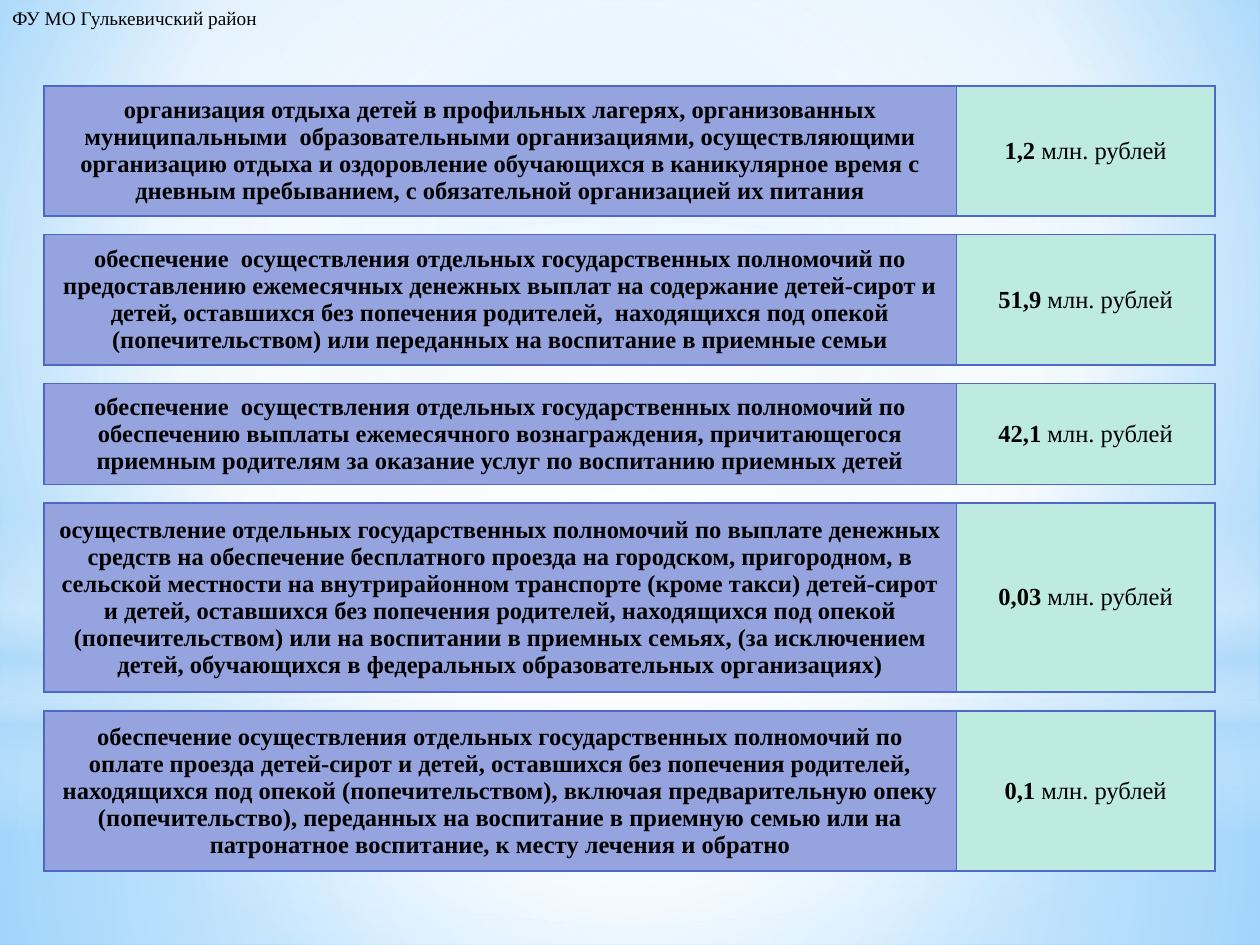
from lxml import etree
from pptx import Presentation
from pptx.dml.color import RGBColor
from pptx.enum.shapes import MSO_SHAPE
from pptx.enum.text import MSO_ANCHOR, MSO_AUTO_SIZE, PP_ALIGN
from pptx.oxml.ns import qn
from pptx.util import Cm, Pt

RECTANGLE, OVAL = MSO_SHAPE.RECTANGLE, MSO_SHAPE.OVAL
CENTER, MIDDLE = PP_ALIGN.CENTER, MSO_ANCHOR.MIDDLE
FIT_SHAPE = MSO_AUTO_SIZE.SHAPE_TO_FIT_TEXT

WIDTH, HEIGHT = 25.4, 19.05
CENTRE_FOCUS = (50, 50, 50, 50)
UNIT = " млн. рублей"

# Row height in cm, purpose of the spending, amount
EXPENSES = [
    (2.62, "организация отдыха детей в профильных лагерях, организованных "
     "муниципальными  образовательными организациями, осуществляющими "
     "организацию отдыха и оздоровление обучающихся в каникулярное время с "
     "дневным пребыванием, с обязательной организацией их питания", "1,2"),
    (2.62, "обеспечение  осуществления отдельных государственных полномочий по "
     "предоставлению ежемесячных денежных выплат на содержание детей-сирот и "
     "детей, оставшихся без попечения родителей,  находящихся под опекой "
     "(попечительством) или переданных на воспитание в приемные семьи", "51,9"),
    (2.03, "обеспечение  осуществления отдельных государственных полномочий по "
     "обеспечению выплаты ежемесячного вознаграждения, причитающегося "
     "приемным родителям за оказание услуг по воспитанию приемных детей", "42,1"),
    (3.81, "осуществление отдельных государственных полномочий по выплате денежных "
     "средств на обеспечение бесплатного проезда на городском, пригородном, в "
     "сельской местности на внутрирайонном транспорте (кроме такси) детей-сирот "
     "и детей, оставшихся без попечения родителей, находящихся под опекой "
     "(попечительством) или на воспитании в приемных семьях, (за исключением "
     "детей, обучающихся в федеральных образовательных организациях)", "0,03"),
    (3.23, "обеспечение осуществления отдельных государственных полномочий по оплате "
     "проезда детей-сирот и детей, оставшихся без попечения родителей, "
     "находящихся под опекой (попечительством), включая предварительную опеку "
     "(попечительство), переданных на воспитание в приемную семью или на "
     "патронатное воспитание, к месту лечения и обратно", "0,1"),
]


def rgb(value):
    return RGBColor.from_string(value)


def add(parent, tag, **attributes):
    child = etree.SubElement(parent, qn(tag))
    for key, value in attributes.items():
        child.set(key, str(value))
    return child


class BudgetSlide:
    font = "Times New Roman"
    text_color = "000000"
    border_color = "4E67C8"
    cell_colors = ("95A4DE", "BEEBDF")
    column_widths = (18.39, 5.21)

    def __init__(self, presentation):
        self.slide = presentation.slides.add_slide(presentation.slide_layouts[6])

    def gradient(self, fill_parent, stops, focus=None):
        """Swap a solid fill for a radial gradient, or a vertical one without focus."""
        solid = fill_parent.find(qn("a:solidFill"))
        gradient = etree.Element(qn("a:gradFill"), rotWithShape="1")
        stop_list = add(gradient, "a:gsLst")
        for position, color, opacity in stops:
            stop = add(stop_list, "a:gs", pos=position * 1000)
            tint = add(stop, "a:srgbClr", val=color)
            if opacity < 100:
                add(tint, "a:alpha", val=opacity * 1000)
        if focus:
            circle = add(gradient, "a:path", path="circle")
            add(circle, "a:fillToRect",
                **{side: inset * 1000 for side, inset in zip("ltrb", focus)})
        else:
            add(gradient, "a:lin", ang=90 * 60000, scaled=0)
        fill_parent.replace(solid, gradient)

    def background(self, stops, focus):
        self.slide.background.fill.solid()
        properties = next(self.slide.element.iter(qn("p:bgPr")))
        self.gradient(properties, stops, focus)

    def glow(self, kind, top, height, stops, focus=None):
        shape = self.slide.shapes.add_shape(kind, 0, Cm(top), Cm(WIDTH), Cm(height))
        shape.shadow.inherit = False
        shape.line.fill.background()
        shape.fill.solid()
        self.gradient(shape.element.spPr, stops, focus)

    def style_run(self, run, size, bold=False):
        run.font.name = self.font
        run.font.size = Pt(size)
        run.font.bold = bold
        run.font.color.rgb = rgb(self.text_color)

    def label(self, text, width, height):
        frame = self.slide.shapes.add_textbox(0, 0, Cm(width), Cm(height)).text_frame
        frame.word_wrap = False
        frame.auto_size = FIT_SHAPE
        frame.text = text
        self.style_run(frame.paragraphs[0].runs[0], 11)

    def cell(self, cell, color, text, unit=""):
        cell.fill.solid()
        cell.fill.fore_color.rgb = rgb(color)
        cell.vertical_anchor = MIDDLE
        paragraph = cell.text_frame.paragraphs[0]
        paragraph.text = text
        paragraph.alignment = CENTER
        self.style_run(paragraph.runs[0], 14, bold=True)
        if unit:
            run = paragraph.add_run()
            run.text = unit
            self.style_run(run, 14)
        # Borders stand before the fill in the cell properties
        properties = cell._tc.get_or_add_tcPr()
        for index, side in enumerate("LRTB"):
            border = etree.Element(qn(f"a:ln{side}"), w=str(Pt(1)))
            add(add(border, "a:solidFill"), "a:srgbClr", val=self.border_color)
            properties.insert(index, border)

    def expense(self, left, top, height, purpose, amount):
        table = self.slide.shapes.add_table(
            1, 2, Cm(left), Cm(top), Cm(sum(self.column_widths)), Cm(height)).table
        table.first_row = table.horz_banding = False
        table.rows[0].height = Cm(height)
        for column, width in zip(table.columns, self.column_widths):
            column.width = Cm(width)
        self.cell(table.cell(0, 0), self.cell_colors[0], purpose)
        self.cell(table.cell(0, 1), self.cell_colors[1], amount, UNIT)


def main():
    presentation = Presentation()
    presentation.slide_width, presentation.slide_height = Cm(WIDTH), Cm(HEIGHT)
    page = BudgetSlide(presentation)

    # Sky background with soft light and a horizon band
    page.background([(0, "9ED5FF", 100), (60, "FFFFFF", 100), (100, "5BB9FF", 100)],
                    (20, 10, 20, 60))
    horizon = 14.17
    page.glow(RECTANGLE, horizon, HEIGHT - horizon,
              [(0, "FFFFFF", 91), (37, "FFFFFF", 76), (100, "B4DCFA", 79)], CENTRE_FOCUS)
    page.glow(RECTANGLE, 0, horizon,
              [(0, "FFFFFF", 89), (48, "FFFFFF", 62), (100, "B4DCFA", 79)], CENTRE_FOCUS)
    page.glow(RECTANGLE, 10.46, 6.35,
              [(0, "FFFFFF", 0), (29, "FFFFFF", 30), (45, "B4DCFA", 40),
               (55, "FFFFFF", 26), (65, "B4DCFA", 60), (100, "FFFFFF", 0)])
    page.glow(OVAL, 4.45, horizon,
              [(0, "FFFFFF", 100), (56, "FFFFFF", 0)], CENTRE_FOCUS)

    # Department name
    page.label("ФУ МО Гулькевичский район", 5.54, 0.74)

    # Expenses, stacked with equal gaps
    top, gap = 1.73, 0.38
    for height, purpose, amount in EXPENSES:
        page.expense(0.89, top, height, purpose, amount)
        top += height + gap

    presentation.save("out.pptx")


if __name__ == "__main__":
    main()
